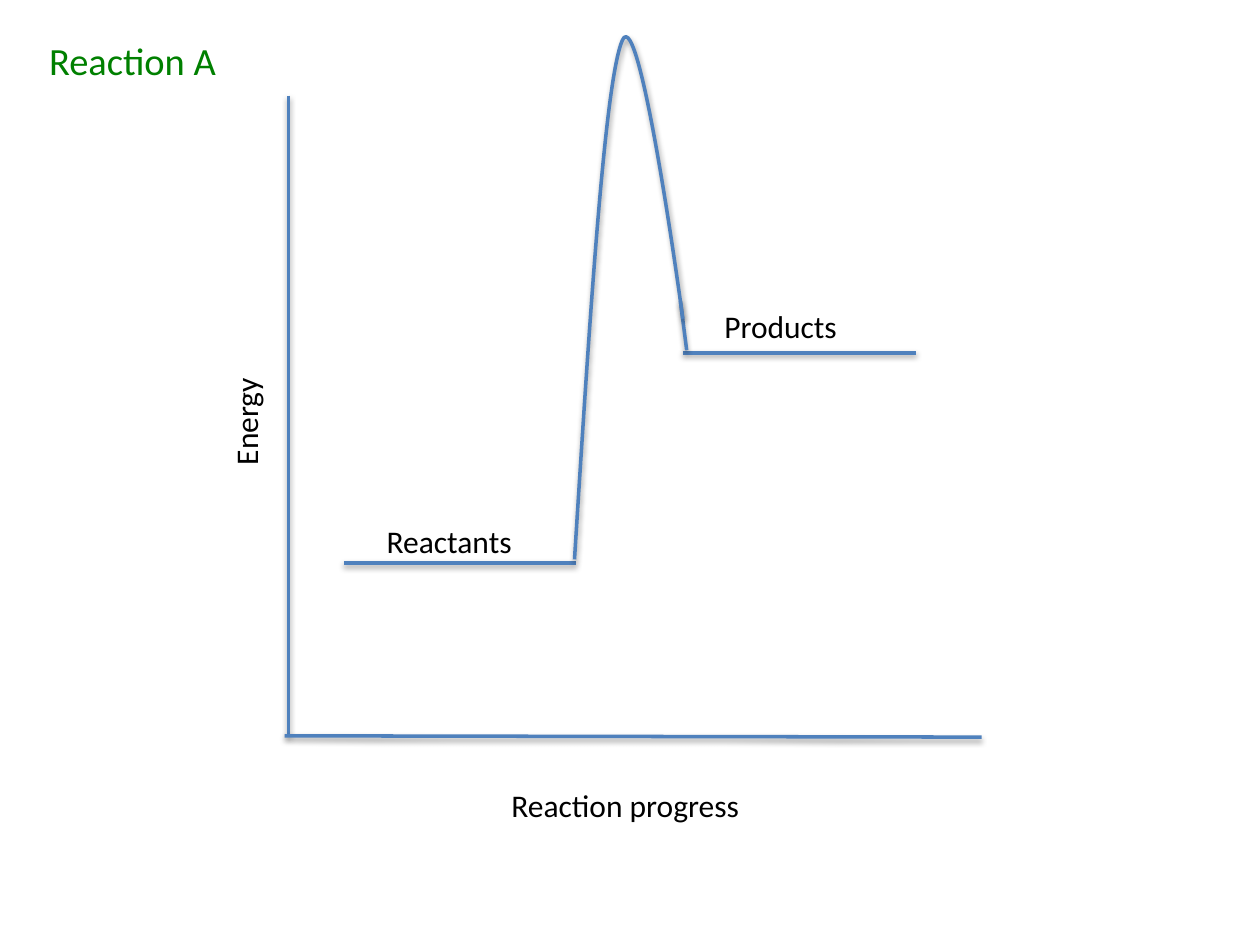
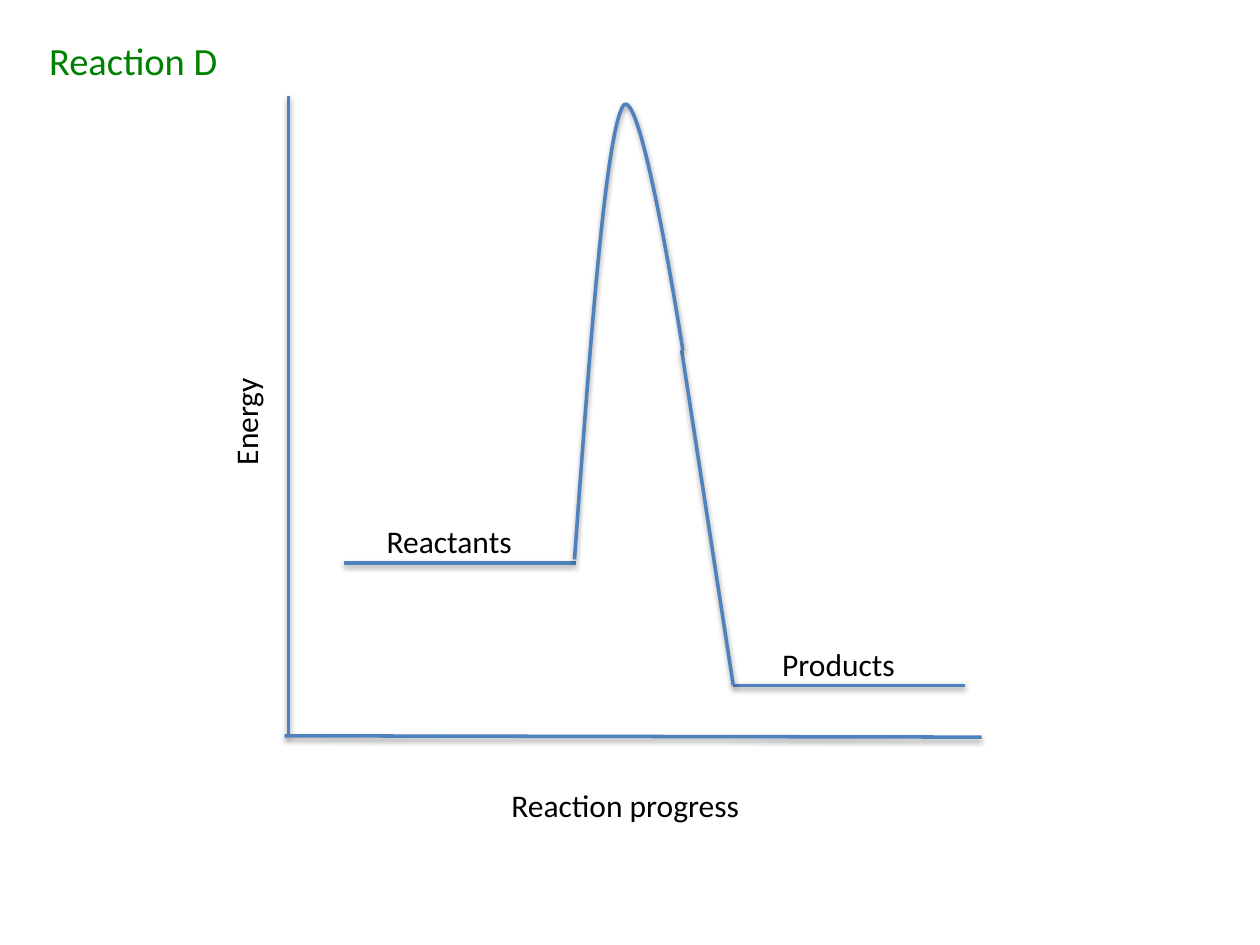
import pptx
import pptx.util
import pptx.dml.color
import pptx.enum.shapes
import pptx.enum.text
import pptx.oxml
import pptx.oxml.ns

Inches = pptx.util.Inches
Pt = pptx.util.Pt
qn = pptx.oxml.ns.qn

COLORS = {"line": "4F81BD", "text": "000000", "title": "008000"}
FONT = "Calibri"
SHADOW = (
    '<a:effectLst %s><a:outerShdw blurRad="40000" dist="20000" dir="5400000" '
    'rotWithShape="0"><a:srgbClr val="000000"><a:alpha val="38000"/></a:srgbClr>'
    "</a:outerShdw></a:effectLst>" % pptx.oxml.ns.nsdecls("a")
)

# What every energy diagram shares: axes, reactant level and labels
SHARED_LINES = [
    ((2.29, 0.76), (2.29, 5.84)),
    ((2.26, 5.84), (7.79, 5.85)),
    ((2.73, 4.47), (4.57, 4.47)),
]
SHARED_LABELS = [
    ("Reactants", (2.97, 4.09, 1.62, 0.4), 0),
    ("Energy", (1.14, 2.78, 1.62, 0.4), 270),
    ("Reaction progress", (3.96, 6.19, 2.12, 0.4), 0),
]

# What differs: barrier curve (start, then Bezier points), descent, product level
REACTIONS = [
    {
        "title": "Reaction A",
        "barrier": [(4.56, 4.44), (4.68, 2.54), (4.8, 0.64), (4.94, 0.32),
                    (5.08, 0), (5.42, 2.53), (5.42, 2.53)],
        "descent": ((5.4, 2.39), (5.45, 2.78)),
        "level": ((5.42, 2.8), (7.27, 2.8)),
        "products": (5.65, 2.39, 1.62, 0.4),
    },
    {
        "title": "Reaction D",
        "barrier": [(4.56, 4.44), (4.68, 2.79), (4.8, 1.13), (4.94, 0.85),
                    (5.08, 0.58), (5.42, 2.78), (5.42, 2.78)],
        "descent": ((5.41, 2.78), (5.82, 5.44)),
        "level": ((5.82, 5.44), (7.66, 5.44)),
        "products": (6.11, 5.07, 1.62, 0.4),
    },
]


def style_line(shape):
    shape.line.color.rgb = pptx.dml.color.RGBColor.from_string(COLORS["line"])
    shape.line.width = Pt(2)
    shape._element.spPr.append(pptx.oxml.parse_xml(SHADOW))


def add_line(s, start, end):
    points = [Inches(v) for v in (*start, *end)]
    style_line(s.shapes.add_connector(
        pptx.enum.shapes.MSO_CONNECTOR.STRAIGHT, *points))


def add_curve(s, points):
    start, *rest = [(Inches(x), Inches(y)) for x, y in points]
    builder = s.shapes.build_freeform(*start)
    builder.add_line_segments(rest, close=False)
    sp = builder.convert_to_shape()
    sp.fill.background()
    style_line(sp)
    # Each three line segments become one cubic Bezier segment
    segments = list(sp._element.iter(qn("a:lnTo")))
    outline = segments[0].getparent()
    for i in range(0, len(segments), 3):
        bezier = outline.makeelement(qn("a:cubicBezTo"), {})
        outline.insert(outline.index(segments[i]), bezier)
        for segment in segments[i:i + 3]:
            bezier.append(segment[0])
            outline.remove(segment)


def set_text(sp, text, box, size, color):
    for name, value in zip(("left", "top", "width", "height"), box):
        setattr(sp, name, Inches(value))
    tf = sp.text_frame
    frame_format = {
        "word_wrap": True,
        "auto_size": pptx.enum.text.MSO_AUTO_SIZE.SHAPE_TO_FIT_TEXT,
        "vertical_anchor": pptx.enum.text.MSO_ANCHOR.TOP,
    }
    for name, value in frame_format.items():
        setattr(tf, name, value)
    p = tf.paragraphs[0]
    p.alignment = pptx.enum.text.PP_ALIGN.LEFT
    r = p.add_run()
    r.text = text
    for name, value in {"name": FONT, "size": Pt(size)}.items():
        setattr(r.font, name, value)
    r.font.color.rgb = pptx.dml.color.RGBColor.from_string(COLORS[color])


def add_label(s, text, box, rotation=0):
    sp = s.shapes.add_textbox(*[Inches(v) for v in box])
    sp.rotation = rotation
    set_text(sp, text, box, 18, "text")


def add_diagram(prs, reaction):
    s = prs.slides.add_slide(prs.slide_layouts[5])
    set_text(s.shapes.title, reaction["title"], (0.29, 0.24, 2, 0.47), 22, "title")
    for start, end in SHARED_LINES + [reaction["level"], reaction["descent"]]:
        add_line(s, start, end)
    add_curve(s, reaction["barrier"])
    for text, box, rotation in SHARED_LABELS:
        add_label(s, text, box, rotation)
    add_label(s, "Products", reaction["products"])


def main():
    prs = pptx.Presentation()
    prs.slide_width, prs.slide_height = Inches(10), Inches(7.5)
    for reaction in REACTIONS:
        add_diagram(prs, reaction)
    prs.save("out.pptx")


if __name__ == "__main__":
    main()
